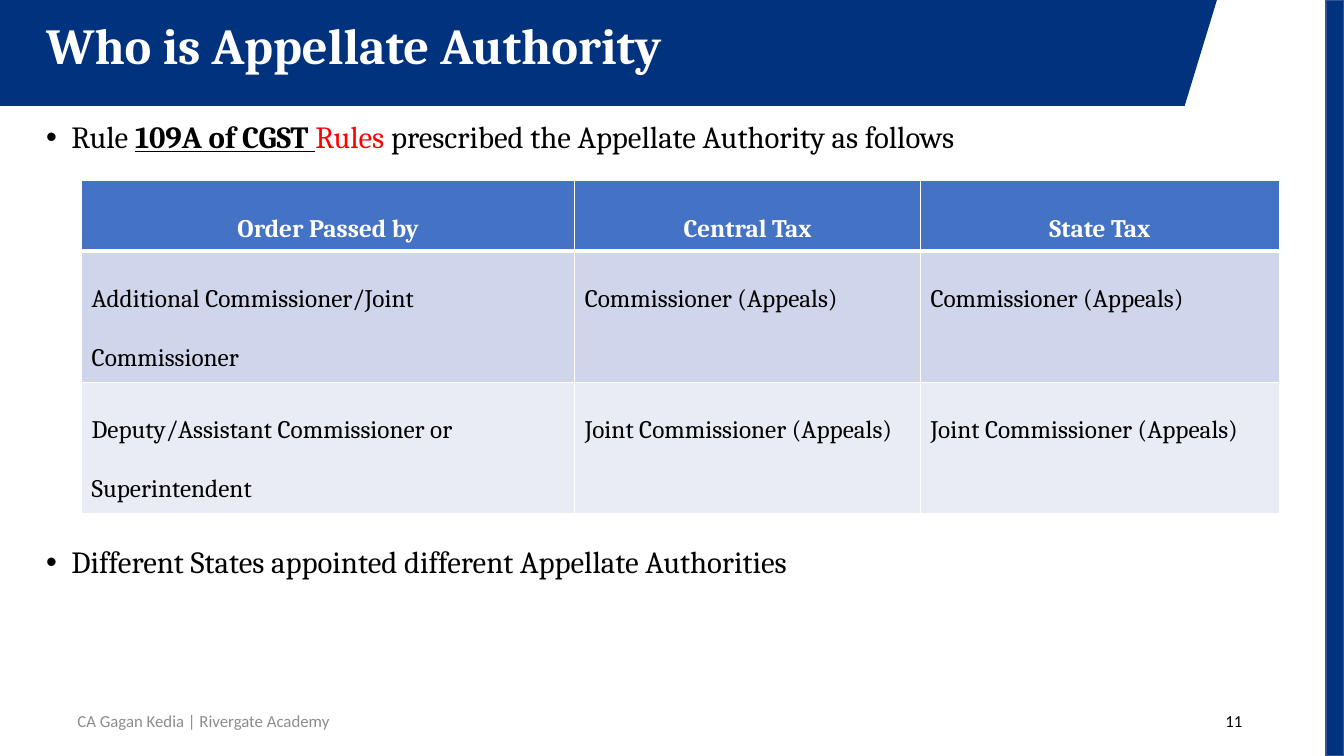
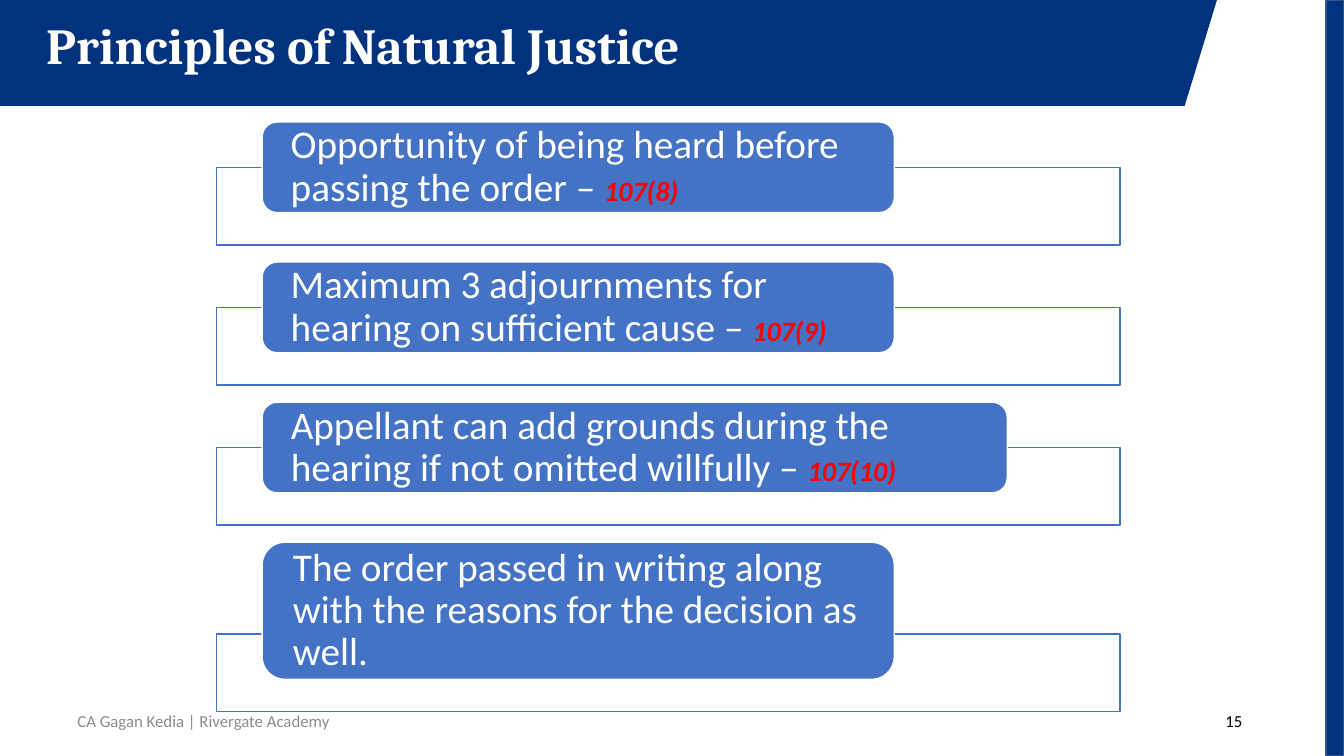
"""Build two slides on appellate authority and natural justice."""
from dataclasses import dataclass

from lxml.etree import SubElement
from pptx import Presentation
from pptx.dml.color import RGBColor
from pptx.enum.shapes import MSO_SHAPE
from pptx.enum.text import MSO_ANCHOR, PP_ALIGN
from pptx.oxml.ns import qn
from pptx.util import Inches, Pt


@dataclass(frozen=True)
class Theme:
    navy: str = "00327D"
    rail_edge: str = "325491"
    blue: str = "4472C4"
    row_tints: tuple = ("CFD5EA", "E9EBF5")
    white: str = "FFFFFF"
    black: str = "000000"
    grey: str = "8C8C8C"
    red: str = "FF0000"
    serif: str = "Cambria"
    sans: str = "Calibri"
    title: int = 36
    principle: int = 28
    bullet: int = 22
    section: int = 20
    table: int = 18
    footer: int = 12


THEME = Theme()
FOOTER = "CA Gagan Kedia | Rivergate Academy"

AUTHORITY = {"title": "Who is Appellate Authority", "number": "11"}
RULE_BULLETS = [
    [("Rule ", {}),
     ("109A of CGST ", {"bold": True, "underline": True}),
     ("Rules", {"color": THEME.red}),
     (" prescribed the Appellate Authority as follows", {})],
    [("Different States appointed different Appellate Authorities", {})],
]
BULLET_GAPS = [0, 280]
ORDERS = [
    ("Order Passed by", "Central Tax", "State Tax"),
    ("Additional Commissioner/Joint Commissioner",
     "Commissioner (Appeals)", "Commissioner (Appeals)"),
    ("Deputy/Assistant Commissioner or Superintendent",
     "Joint Commissioner (Appeals)", "Joint Commissioner (Appeals)"),
]
COLUMN_WIDTHS = [4.89, 3.43, 3.56]
ROW_HEIGHTS = [0.67, 1.25, 1.25]

JUSTICE = {"title": "Principles of Natural Justice", "number": "15"}
PRINCIPLES = [
    ("Opportunity of being heard before passing the order – ", "107(8)", 6.27, 0.9),
    ("Maximum 3 adjournments for hearing on sufficient cause – ", "107(9)", 6.27, 0.9),
    ("Appellant can add grounds during the hearing if not omitted willfully – ",
     "107(10)", 7.39, 0.9),
    ("The order passed in writing along with the reasons for the decision as well.",
     "", 6.27, 1.36),
]


def apply(target, formats):
    for attribute, value in formats.items():
        setattr(target, attribute, value)


def add_run(paragraph, text, size, font, color, **formats):
    run = paragraph.add_run()
    run.text = text
    apply(run.font, {"size": Pt(size), "name": font, **formats})
    run.font.color.rgb = RGBColor.from_string(color)


def add_textbox(slide, left, top, width, height, **formats):
    frame = slide.shapes.add_textbox(
        Inches(left), Inches(top), Inches(width), Inches(height)).text_frame
    apply(frame, {"word_wrap": True, **formats})
    return frame


def paint(shape, fill, line=None):
    shape.shadow.inherit = False
    shape.fill.solid()
    shape.fill.fore_color.rgb = RGBColor.from_string(fill)
    if line:
        shape.line.color.rgb = RGBColor.from_string(line)
        shape.line.width = Pt(1)
    else:
        shape.line.fill.background()


def add_block(slide, preset, left, top, width, height, fill, line):
    block = slide.shapes.add_shape(
        preset, Inches(left), Inches(top), Inches(width), Inches(height))
    paint(block, fill, line)
    return block


def add_base(deck, title, number):
    slide = deck.slides.add_slide(deck.slide_layouts[6])
    outline = slide.shapes.build_freeform(0, 0)
    corners = [(0, 1.05), (11.75, 1.05), (12.07, 0)]
    outline.add_line_segments([(Inches(x), Inches(y)) for x, y in corners])
    paint(outline.convert_to_shape(), THEME.navy)
    add_block(slide, MSO_SHAPE.RECTANGLE, 13.15, 0, 0.18, 7.5,
              THEME.navy, THEME.rail_edge)
    heading = add_textbox(slide, 0.36, 0.16, 9.19, 0.64).paragraphs[0]
    heading.line_spacing = 0.9
    add_run(heading, title, THEME.title, THEME.serif, THEME.white, bold=True)
    return slide


def add_footer(slide, number):
    for text, left, width, alignment, color in (
            (FOOTER, 0.02, 4, PP_ALIGN.CENTER, THEME.grey),
            (number, 9.42, 3, PP_ALIGN.RIGHT, THEME.black)):
        line = add_textbox(slide, left, 6.95, width, 0.4,
                           vertical_anchor=MSO_ANCHOR.MIDDLE).paragraphs[0]
        line.alignment = alignment
        add_run(line, text, THEME.footer, THEME.sans, color)


def add_bullets(slide):
    body = add_textbox(slide, 0.36, 1.16, 12.74, 5.74)
    for index, (runs, gap) in enumerate(zip(RULE_BULLETS, BULLET_GAPS)):
        bullet = body.add_paragraph() if index else body.paragraphs[0]
        apply(bullet, {"line_spacing": 0.9, "space_before": Pt(gap)})
        properties = bullet._p.get_or_add_pPr()
        properties.set("marL", str(Inches(0.25)))
        properties.set("indent", str(Inches(-0.25)))
        SubElement(properties, qn("a:buFont")).set("typeface", "Arial")
        SubElement(properties, qn("a:buChar")).set("char", "•")
        for text, formats in runs:
            add_run(bullet, text, THEME.bullet, THEME.serif,
                    **{"color": THEME.black, **formats})


def add_borders(cell, widths):
    properties = cell._tc.get_or_add_tcPr()
    for side, width in widths.items():
        edge = SubElement(properties, qn(f"a:ln{side}"), w=str(Pt(width)))
        color = SubElement(SubElement(edge, qn("a:solidFill")), qn("a:srgbClr"))
        color.set("val", THEME.white)


def add_orders(slide):
    orders = slide.shapes.add_table(
        len(ORDERS), len(COLUMN_WIDTHS), Inches(0.81), Inches(1.79),
        Inches(sum(COLUMN_WIDTHS)), Inches(sum(ROW_HEIGHTS))).table
    for column, width in zip(orders.columns, COLUMN_WIDTHS):
        column.width = Inches(width)
    for row, height in zip(orders.rows, ROW_HEIGHTS):
        row.height = Inches(height)
    for row, (texts, tint) in enumerate(zip(ORDERS, (THEME.blue, *THEME.row_tints))):
        header = row == 0
        for column, text in enumerate(texts):
            cell = orders.cell(row, column)
            add_borders(cell, {"L": 1, "R": 1, "T": 3 if row == 1 else 1,
                               "B": 3 if header else 1})
            cell.fill.solid()
            cell.fill.fore_color.rgb = RGBColor.from_string(tint)
            entry = cell.text_frame.paragraphs[0]
            apply(entry, {"line_spacing": 2.0,
                          "alignment": PP_ALIGN.CENTER if header else PP_ALIGN.LEFT})
            add_run(entry, text, THEME.table, THEME.serif,
                    THEME.white if header else THEME.black, bold=header)


def add_principles(slide):
    frame_height, overlap, gap = 0.77, 0.45, 0.17
    top = 1.21
    for text, section, width, height in PRINCIPLES:
        frame_top = top + height - overlap
        add_block(slide, MSO_SHAPE.RECTANGLE, 2.15, frame_top, 8.96, frame_height,
                  THEME.white, THEME.blue)
        label = add_block(slide, MSO_SHAPE.ROUNDED_RECTANGLE, 2.6, top, width, height,
                          THEME.blue, THEME.white).text_frame
        apply(label, {"word_wrap": True, "vertical_anchor": MSO_ANCHOR.MIDDLE,
                      "margin_left": Inches(0.24), "margin_right": Inches(0.24),
                      "margin_top": 0, "margin_bottom": 0})
        principle = label.paragraphs[0]
        apply(principle, {"line_spacing": 0.9, "alignment": PP_ALIGN.LEFT})
        add_run(principle, text, THEME.principle, THEME.sans, THEME.white)
        if section:
            add_run(principle, section, THEME.section, THEME.sans, THEME.red,
                    bold=True, italic=True)
        top = frame_top + frame_height + gap


def main():
    deck = Presentation()
    apply(deck, {"slide_width": Inches(13.33), "slide_height": Inches(7.5)})
    for content, parts in ((AUTHORITY, (add_bullets, add_orders)),
                           (JUSTICE, (add_principles,))):
        slide = add_base(deck, **content)
        for add_part in parts:
            add_part(slide)
        add_footer(slide, content["number"])
    deck.save("out.pptx")


if __name__ == "__main__":
    main()
